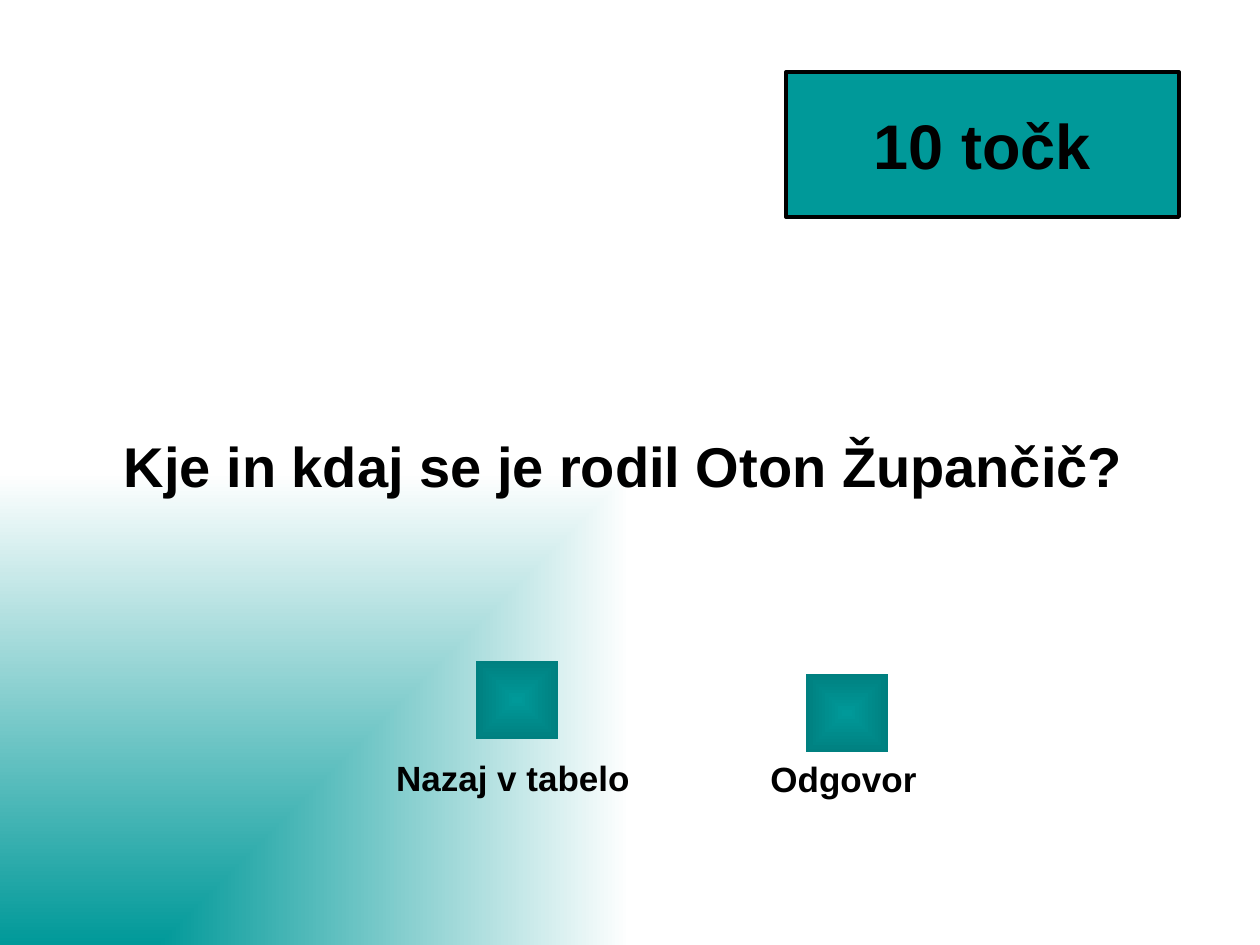
from lxml.etree import SubElement
from pptx import Presentation
from pptx.dml.color import RGBColor
from pptx.enum.shapes import MSO_SHAPE as Shape
from pptx.enum.text import MSO_ANCHOR as Anchor, PP_ALIGN as Align
from pptx.oxml.ns import qn
from pptx.util import Emu, Pt

SCALE = 914400 / 126
TEAL, DARK, WHITE, BLACK = "009999", "008080", "FFFFFF", "000000"


def px(*nums):
    return [Emu(round(n * SCALE)) for n in nums]


def shade(root, fill, ends, focus):
    """Give a fill a rectangular gradient that starts at the focus (l, t, r, b)."""
    fill.gradient()
    for stop, tone in zip(fill.gradient_stops, ends):
        stop.color.rgb = RGBColor.from_string(tone)
    grad = root.find(".//" + qn("a:gradFill"))
    grad.remove(grad.find(qn("a:lin")))
    way = SubElement(grad, qn("a:path"), path="rect")
    SubElement(way, qn("a:fillToRect"),
               {side: str(part * 1000) for side, part in zip("ltrb", focus)})


prs = Presentation()
prs.slide_width, prs.slide_height = px(1260, 945)
slide = prs.slides.add_slide(prs.slide_layouts[5])
shapes = slide.shapes
shade(slide.element, slide.background.fill, (TEAL, WHITE), (0, 100, 100, 0))

title = shapes.title
title.left, title.top, title.width, title.height = px(57, 349, 1134, 233)

score = shapes.add_shape(Shape.RECTANGLE, *px(786, 72, 393, 145))
score.shadow.inherit = False
score.fill.solid()
score.fill.fore_color.rgb = RGBColor.from_string(TEAL)
score.line.color.rgb = RGBColor.from_string(BLACK)
score.line.width = Pt(2.25)

texts = [(title, "Kje in kdaj se je rodil Oton Župančič?", 32, Anchor.MIDDLE),
         (score, "10 točk", 36, Anchor.MIDDLE)]

# Each button with its label: button left and top, label place, wording
for left, top, place, text in (
        (476, 661, (367, 750, 292, 54), "Nazaj v tabelo"),
        (806, 674, (722, 751, 243, 54), "Odgovor")):
    button = shapes.add_shape(Shape.ACTION_BUTTON_CUSTOM, *px(left, top, 82, 78))
    button.shadow.inherit = False
    button.line.fill.background()
    shade(button.element, button.fill, (TEAL, DARK), (50, 50, 50, 50))
    texts.append((shapes.add_textbox(*px(*place)), text, 20, Anchor.TOP))

for shape, text, size, anchor in texts:
    frame = shape.text_frame
    frame.word_wrap = shape is not score
    frame.vertical_anchor = anchor
    para = frame.paragraphs[0]
    para.text = text
    para.alignment = Align.CENTER
    font = para.runs[0].font
    for name, value in {"name": "Arial", "size": Pt(size), "bold": True}.items():
        setattr(font, name, value)
    font.color.rgb = RGBColor.from_string(BLACK)

prs.save("out.pptx")
